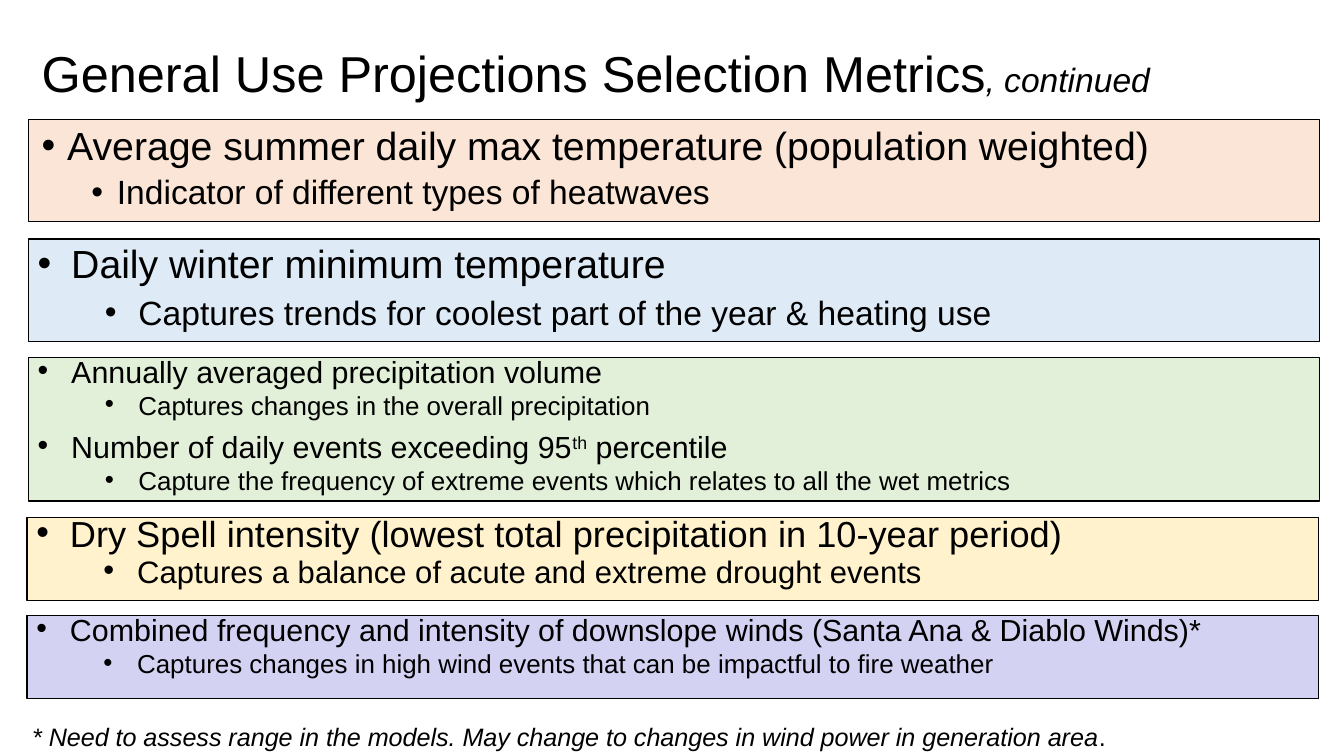
from dataclasses import dataclass

from lxml.etree import SubElement
from pptx import Presentation
from pptx.dml.color import RGBColor
from pptx.enum.text import MSO_ANCHOR, MSO_AUTO_SIZE, PP_ALIGN
from pptx.oxml.ns import qn
from pptx.util import Inches, Pt


@dataclass(frozen=True)
class Theme:
    font: str = "Arial"
    ink: str = "000000"
    heat: str = "FBE5D6"
    cold: str = "DEEBF7"
    wet: str = "E2F0D9"
    dry: str = "FFF2CC"
    wind: str = "D4D2F3"
    title: float = 27
    subtitle: float = 18
    note: float = 13.5
    large: tuple = (21, 18)
    medium: tuple = (19.4, 16.65)
    small: tuple = (16.3, 13.9)


@dataclass(frozen=True)
class ListStyle:
    indents: tuple
    hanging: float
    before: tuple
    spacing: float
    inset: tuple


BODY = ListStyle((0.19, 0.56), 0.19, (7.5, 3.8), 0.9, (0.1, 0.05))
OPEN = ListStyle((0.25, 0.75), 0.25, (10, 5), 0.9, (0.07, 0.04))
TIGHT = ListStyle((0.25, 0.75), 0.25, (10, 5), 0.7, (0.07, 0.04))


class SlideBuilder:
    def __init__(self, s, theme):
        self.s = s
        self.theme = theme

    def place(self, sp, left, top, width, height):
        sp.left, sp.top = Inches(left), Inches(top)
        sp.width, sp.height = Inches(width), Inches(height)

    def run(self, p, text, size, italic=False, raised=False):
        r = p.add_run()
        r.text = text
        r.font.name = self.theme.font
        r.font.size = Pt(size)
        r.font.italic = italic
        r.font.color.rgb = RGBColor.from_string(self.theme.ink)
        if raised:
            r.font._element.set("baseline", "30000")

    def title(self, text, suffix):
        sp = self.s.shapes.title
        self.place(sp, 0.21, 0.15, 9.49, 0.83)
        tf = sp.text_frame
        tf.auto_size = MSO_AUTO_SIZE.NONE
        tf.vertical_anchor = MSO_ANCHOR.MIDDLE
        p = tf.paragraphs[0]
        p.alignment = PP_ALIGN.LEFT
        p.line_spacing = 0.9
        self.run(p, text, self.theme.title)
        self.run(p, suffix, self.theme.subtitle, italic=True)

    def bullet(self, p, level, style):
        p.level = level
        p.alignment = PP_ALIGN.LEFT
        p.line_spacing = style.spacing
        p.space_before = Pt(style.before[level])
        pPr = p._p.get_or_add_pPr()
        pPr.set("marL", str(Inches(style.indents[level])))
        pPr.set("indent", str(-Inches(style.hanging)))
        SubElement(pPr, qn("a:buFont"), typeface=self.theme.font)
        SubElement(pPr, qn("a:buChar"), char="•")

    def panel(self, sp, color, style, sizes, items):
        sp.fill.solid()
        sp.fill.fore_color.rgb = RGBColor.from_string(color)
        sp.line.color.rgb = RGBColor.from_string(self.theme.ink)
        sp.line.width = Pt(0.75)
        tf = sp.text_frame
        tf.word_wrap = True
        tf.auto_size = MSO_AUTO_SIZE.NONE
        tf.vertical_anchor = MSO_ANCHOR.TOP
        tf.margin_left = tf.margin_right = Inches(style.inset[0])
        tf.margin_top = tf.margin_bottom = Inches(style.inset[1])
        for i, (level, *parts) in enumerate(items):
            p = tf.add_paragraph() if i else tf.paragraphs[0]
            self.bullet(p, level, style)
            for part in parts:
                self.run(p, part, sizes[level], raised=part == "th")

    def body_panel(self, box, *content):
        sp = self.s.placeholders[1]
        self.place(sp, *box)
        self.panel(sp, *content)

    def text_panel(self, box, *content):
        sp = self.s.shapes.add_textbox(*map(Inches, box))
        self.panel(sp, *content)

    def note(self, text, ending):
        box = (0.14, 5.32, 9.72, 0.33)
        tf = self.s.shapes.add_textbox(*map(Inches, box)).text_frame
        tf.word_wrap = True
        tf.auto_size = MSO_AUTO_SIZE.SHAPE_TO_FIT_TEXT
        p = tf.paragraphs[0]
        self.run(p, text, self.theme.note, italic=True)
        self.run(p, ending, self.theme.note)


def main():
    prs = Presentation()
    prs.slide_width, prs.slide_height = Inches(10), Inches(10 * 9 / 16)
    theme = Theme()
    slide = SlideBuilder(prs.slides.add_slide(prs.slide_layouts[1]), theme)
    width = 9.61

    slide.title("General Use Projections Selection Metrics", ", continued")
    slide.body_panel((0.21, 0.89, width, 0.76), theme.heat, BODY, theme.large, [
        (0, "Average summer daily max temperature (population weighted)"),
        (1, "Indicator of different types of heatwaves"),
    ])
    slide.text_panel((0.21, 1.78, width, 0.76), theme.cold, OPEN, theme.large, [
        (0, "Daily winter minimum temperature"),
        (1, "Captures trends for coolest part of the year & heating use"),
    ])
    slide.text_panel((0.21, 2.66, width, 1.07), theme.wet, TIGHT, theme.small, [
        (0, "Annually averaged precipitation volume"),
        (1, "Captures changes in the overall precipitation"),
        (0, "Number of daily events exceeding 95", "th", " percentile"),
        (1, "Capture the frequency of extreme events which relates to all the wet metrics"),
    ])
    slide.text_panel((0.2, 3.85, width, 0.62), theme.dry, TIGHT, theme.medium, [
        (0, "Dry Spell intensity (lowest total precipitation in 10-year period)"),
        (1, "Captures a balance of acute and extreme drought events"),
    ])
    slide.text_panel((0.2, 4.58, width, 0.62), theme.wind, TIGHT, theme.small, [
        (0, "Combined frequency and intensity of downslope winds (Santa Ana & Diablo Winds)*"),
        (1, "Captures changes in high wind events that can be impactful to fire weather"),
    ])
    slide.note(
        "* Need to assess range in the models. "
        "May change to changes in wind power in generation area", ".")
    prs.save("out.pptx")


if __name__ == "__main__":
    main()
